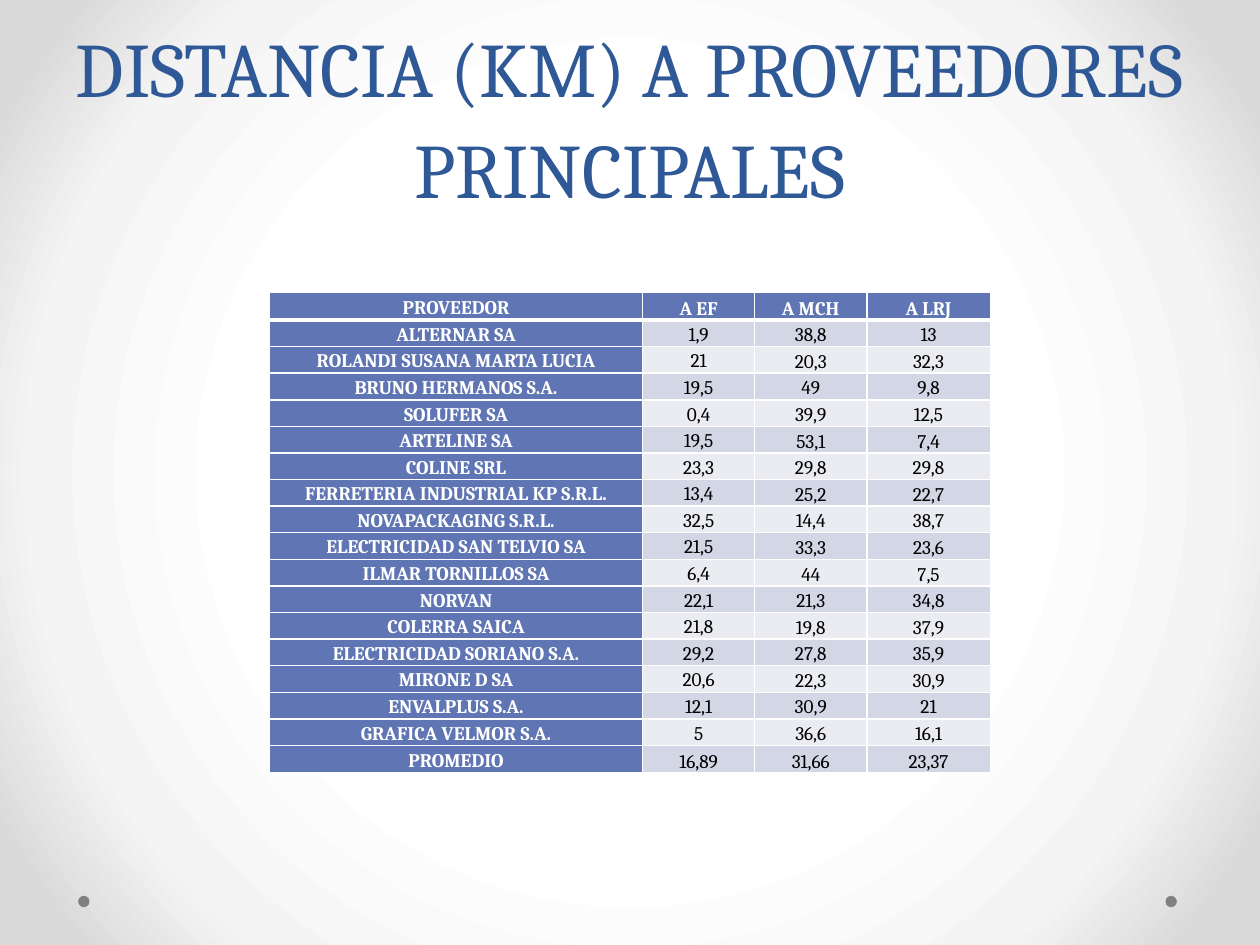
from dataclasses import dataclass

from pptx import Presentation
from pptx.dml.color import RGBColor as Rgb
from pptx.enum.shapes import MSO_SHAPE as Shape
from pptx.enum.text import MSO_ANCHOR as Anchor, PP_ALIGN as Align
from pptx.oxml import parse_xml
from pptx.oxml.ns import nsdecls
from pptx.util import Inches, Pt


@dataclass(frozen=True)
class Theme:
    font: str = "Cambria"
    title: str = "2F5897"
    head: str = "6076B4"
    bands: tuple = ("D2D6E5", "EAECF2")
    ink: str = "000000"
    white: str = "FFFFFF"
    dot: str = "808080"
    glow: tuple = ((50, "FFFFFF"), (76, "F4F4F4"), (92, "DADADA"))
    big: int = 44
    lead: int = 58
    small: int = 11
    thin: int = 1
    thick: int = 3


class Board:
    """A slide on a grid of 100 columns by 75 rows."""

    def __init__(self, deck, theme):
        self.theme = theme
        self.unit = deck.slide_width / 100
        self.slide = deck.slides.add_slide(deck.slide_layouts[6])

    def span(self, *cells):
        return [round(n * self.unit) for n in cells]

    def label(self, frame, text, size, color, bold, space):
        frame.text = text
        par = frame.paragraphs[0]
        par.alignment = Align.CENTER
        par.line_spacing = space
        font = par.runs[0].font
        font.name, font.size, font.bold = self.theme.font, Pt(size), bold
        font.color.rgb = Rgb.from_string(color)

    def glow(self):
        stops = "".join(
            f'<a:gs pos="{pos * 1000}"><a:srgbClr val="{color}"/></a:gs>'
            for pos, color in self.theme.glow)
        back = parse_xml(
            f'<p:bg {nsdecls("p", "a")}><p:bgPr><a:gradFill rotWithShape="1">'
            f'<a:gsLst>{stops}</a:gsLst><a:path path="circle">'
            '<a:fillToRect l="50000" t="50000" r="50000" b="50000"/></a:path>'
            '</a:gradFill><a:effectLst/></p:bgPr></p:bg>')
        self.slide.element.cSld.insert(0, back)

    def dot(self, left, top, size):
        dot = self.slide.shapes.add_shape(
            Shape.OVAL, *self.span(left, top, size, size))
        dot.shadow.inherit = False
        dot.fill.solid()
        dot.fill.fore_color.rgb = Rgb.from_string(self.theme.dot)
        dot.line.fill.background()

    def title(self, text, *area):
        frame = self.slide.shapes.add_textbox(*self.span(*area)).text_frame
        frame.word_wrap = True
        frame.vertical_anchor = Anchor.BOTTOM
        frame.margin_left = frame.margin_right = Inches(0.05)
        look = self.theme
        self.label(frame, text, look.big, look.title, False, Pt(look.lead))

    def edge(self, cell, top, bottom):
        thin = self.theme.thin
        sides = zip("LRTB", (thin, thin, top, bottom))
        for spot, (side, width) in enumerate(sides):
            line = parse_xml(
                f'<a:ln{side} {nsdecls("a")} w="{Pt(width)}"><a:solidFill>'
                f'<a:srgbClr val="{self.theme.white}"/></a:solidFill></a:ln{side}>')
            cell._tc.get_or_add_tcPr().insert(spot, line)

    def table(self, data, left, top, wide, high):
        look, last = self.theme, len(data) - 1
        table = self.slide.shapes.add_table(
            len(data), len(wide),
            *self.span(left, top, sum(wide), sum(high))).table
        for col, width in zip(table.columns, self.span(*wide)):
            col.width = width
        for row, height in zip(table.rows, self.span(*high)):
            row.height = height
        for r, line in enumerate(data):
            for c, text in enumerate(line):
                cell = table.cell(r, c)
                head = r == 0 or c == 0
                middle = c == 0 or (c == 1 and 0 < r < last)
                cell.margin_left = cell.margin_right = Inches(0.05)
                cell.margin_top = cell.margin_bottom = 0
                cell.vertical_anchor = Anchor.MIDDLE if middle else Anchor.BOTTOM
                cell.fill.solid()
                fill = look.head if head else look.bands[(r - 1) % 2]
                cell.fill.fore_color.rgb = Rgb.from_string(fill)
                self.label(cell.text_frame, text, look.small,
                           look.white if head else look.ink, head, 1.15)
                self.edge(cell, look.thick if r == 1 else look.thin,
                          look.thick if r == 0 else look.thin)


# Suppliers and their distances to each site
ROWS = [
    ("PROVEEDOR", "A EF", "A MCH", "A LRJ"),
    ("ALTERNAR SA", "1,9", "38,8", "13"),
    ("ROLANDI SUSANA MARTA LUCIA", "21", "20,3", "32,3"),
    ("BRUNO HERMANOS S.A.", "19,5", "49", "9,8"),
    ("SOLUFER SA", "0,4", "39,9", "12,5"),
    ("ARTELINE SA", "19,5", "53,1", "7,4"),
    ("COLINE SRL", "23,3", "29,8", "29,8"),
    ("FERRETERIA INDUSTRIAL KP S.R.L.", "13,4", "25,2", "22,7"),
    ("NOVAPACKAGING S.R.L.", "32,5", "14,4", "38,7"),
    ("ELECTRICIDAD SAN TELVIO SA", "21,5", "33,3", "23,6"),
    ("ILMAR TORNILLOS SA", "6,4", "44", "7,5"),
    ("NORVAN", "22,1", "21,3", "34,8"),
    ("COLERRA SAICA", "21,8", "19,8", "37,9"),
    ("ELECTRICIDAD SORIANO S.A.", "29,2", "27,8", "35,9"),
    ("MIRONE D SA", "20,6", "22,3", "30,9"),
    ("ENVALPLUS S.A.", "12,1", "30,9", "21"),
    ("GRAFICA VELMOR S.A.", "5", "36,6", "16,1"),
    ("PROMEDIO", "16,89", "31,66", "23,37"),
]


def main():
    deck = Presentation()
    deck.slide_width, deck.slide_height = Inches(10), Inches(7.5)
    board = Board(deck, Theme())

    # Backdrop
    board.glow()
    for left in (92.5, 6.2):
        board.dot(left, 71.1, 0.9)

    # Heading
    board.title("DISTANCIA (KM) A PROVEEDORES PRINCIPALES", 5, 0, 90, 17.5)

    # Distance table, with slightly taller first and last rows
    high = [2.2] + [2.1] * (len(ROWS) - 2) + [2.2]
    board.table(ROWS, 21.4, 23.2, (29.6, 8.9, 8.9, 9.8), high)

    deck.save("out.pptx")


if __name__ == "__main__":
    main()
